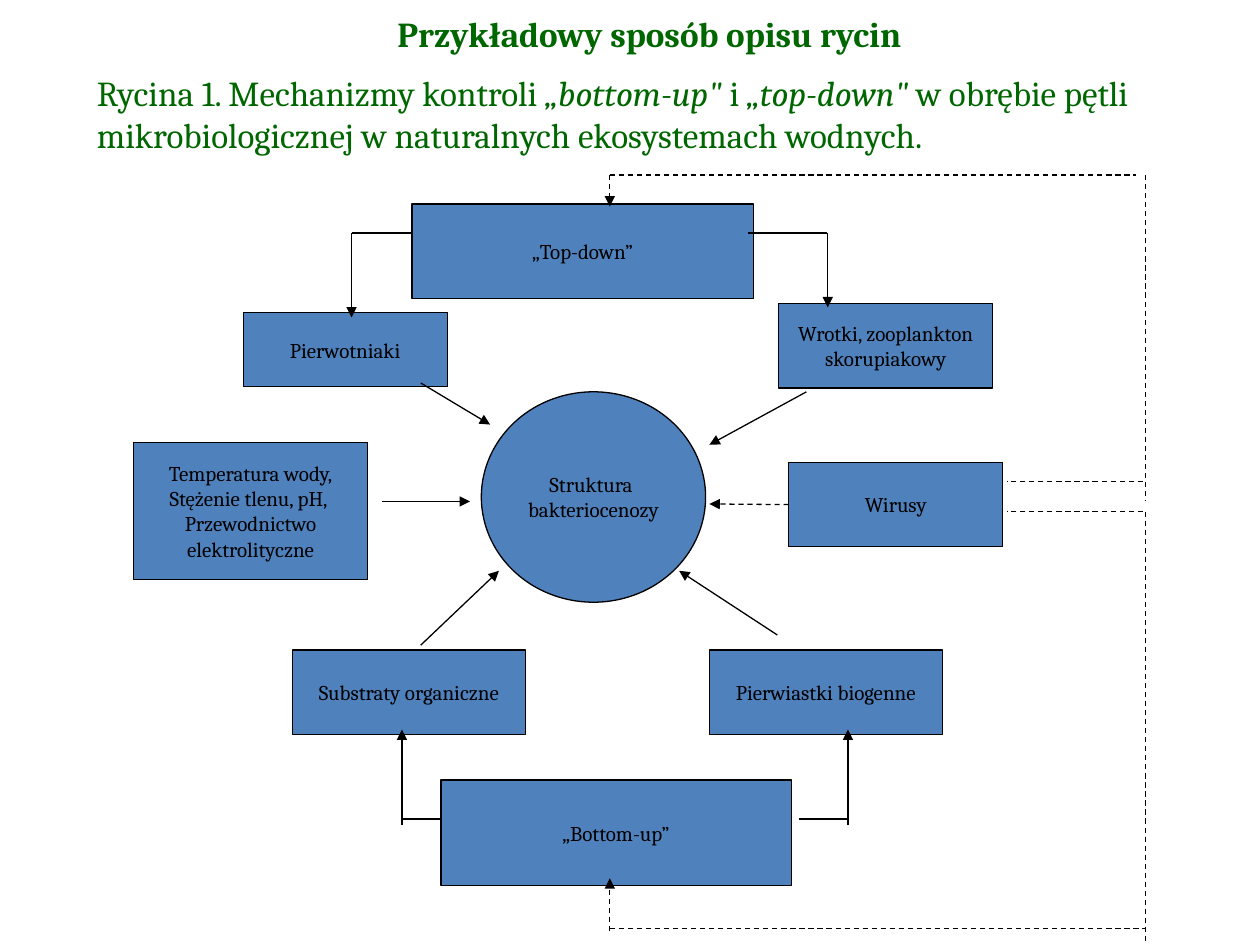
import dataclasses
import typing

import pptx
import pptx.dml.color
import pptx.enum.dml
import pptx.enum.shapes
import pptx.enum.text
import pptx.oxml
import pptx.oxml.ns
import pptx.util

COLUMNS, ROWS = 100, 75
WIDTH, HEIGHT = pptx.util.Inches(10), pptx.util.Inches(7.5)
FONT, GREEN, BLUE, BLACK = "Cambria", "006600", "4F81BD", "000000"
SHAPES = pptx.enum.shapes.MSO_SHAPE
CENTER = pptx.enum.text.PP_ALIGN.CENTER
MIDDLE = pptx.enum.text.MSO_ANCHOR.MIDDLE


@dataclasses.dataclass(frozen=True)
class Node:
    """A labelled shape placed in grid columns and rows."""
    text: str
    left: float
    top: float
    width: float
    height: float
    kind: typing.Any = SHAPES.RECTANGLE


@dataclasses.dataclass(frozen=True)
class Link:
    """A straight line between two grid points."""
    start: tuple[float, float]
    end: tuple[float, float]
    arrow: bool = False
    dashed: bool = False
    source: typing.Optional[str] = None
    side: int = 1


VIRUSES = "Wirusy"
NODES = [
    Node("Struktura \nbakteriocenozy", 38.2, 31.1, 17.8, 16.7, SHAPES.OVAL),
    Node("Pierwotniaki", 19.3, 24.8, 16.2, 5.9),
    Node("Wrotki, zooplankton\nskorupiakowy", 61.8, 24.1, 17, 6.7),
    Node("Temperatura wody,\nStężenie tlenu, pH, \nPrzewodnictwo\nelektrolityczne",
         10.6, 35.1, 18.6, 10.9),
    Node("Substraty organiczne", 23.2, 51.6, 18.5, 6.7),
    Node("Pierwiastki biogenne", 56.3, 51.6, 18.5, 6.7),
    Node(VIRUSES, 62.6, 36.7, 17, 6.7),
    Node("„Bottom-up”", 35, 61.9, 27.8, 8.4),
    Node("„Top-down”", 32.7, 16.2, 27.1, 7.5),
]
LINKS = [
    Link((33.4, 51.2), (39.6, 45.3), arrow=True),
    Link((30.3, 39.8), (37.3, 39.8), arrow=True),
    Link((33.4, 30.4), (38.9, 33.7), arrow=True),
    Link((64, 31.1), (56.3, 35.3), arrow=True),
    Link((61.7, 50.4), (53.9, 45.3), arrow=True),
    Link((31.9, 65.5), (31.9, 57.9), arrow=True),
    Link((67.3, 65.5), (67.3, 57.9), arrow=True),
    Link((31.9, 65), (35, 65)),
    Link((63.4, 65), (67.2, 65)),
    Link((27.9, 18.5), (27.9, 25.2), arrow=True),
    Link((65.7, 18.5), (65.7, 24.4), arrow=True),
    Link((27.9, 18.5), (32.6, 18.5)),
    Link((65.6, 18.5), (59.4, 18.5)),
    Link((62.6, 40), (56.3, 40), arrow=True, dashed=True, source=VIRUSES),
    Link((48.4, 13.9), (48.4, 16.4), arrow=True, dashed=True),
    Link((48.4, 13.9), (90.2, 13.9), dashed=True),
    Link((90.9, 13.9), (90.9, 39.8), dashed=True),
    Link((90.7, 38.2), (79.9, 38.2), dashed=True),
    Link((90.7, 40.6), (79.9, 40.6), dashed=True),
    Link((90.9, 40.6), (90.9, 75), dashed=True),
    Link((48.4, 73.7), (90.9, 73.7), dashed=True),
    Link((48.4, 73.9), (48.4, 69.7), arrow=True, dashed=True),
]
CAPTION = [
    ("Rycina 1. Mechanizmy kontroli", False),
    (" „bottom-up\"", True),
    (" i", False),
    (" „top-down\"", True),
    (" w obrębie pętli mikrobiologicznej w naturalnych ekosystemach wodnych.", False),
]


def across(columns: float) -> int:
    """Turn grid columns into a length."""
    return round(WIDTH * columns / COLUMNS)


def down(rows: float) -> int:
    """Turn grid rows into a length."""
    return round(HEIGHT * rows / ROWS)


def color(value: str) -> pptx.dml.color.RGBColor:
    """Turn a hex string into a colour."""
    return pptx.dml.color.RGBColor.from_string(value)


def style_run(run, size: float, value: str, bold: bool = False, italic: bool = False) -> None:
    """Set the font of a run."""
    run.font.name = FONT
    run.font.size = pptx.util.Pt(size)
    run.font.color.rgb = color(value)
    run.font.bold = bold
    run.font.italic = italic


def draw_node(page, node: Node):
    """Draw a filled shape with its centred label."""
    shape = page.shapes.add_shape(node.kind, across(node.left), down(node.top),
                                  across(node.width), down(node.height))
    shape.shadow.inherit = False
    shape.fill.solid()
    shape.fill.fore_color.rgb = color(BLUE)
    shape.line.color.rgb = color(BLACK)
    shape.line.width = pptx.util.Pt(0.75)
    frame = shape.text_frame
    frame.word_wrap = False
    frame.vertical_anchor = MIDDLE
    frame.text = node.text
    for para in frame.paragraphs:
        para.alignment = CENTER
        for run in para.runs:
            style_run(run, 12, BLACK)
    return shape


def draw_link(page, link: Link, shapes: dict) -> None:
    """Draw a line with an optional dash, arrowhead and joined start."""
    connector = page.shapes.add_connector(
        pptx.enum.shapes.MSO_CONNECTOR.STRAIGHT,
        across(link.start[0]), down(link.start[1]), across(link.end[0]), down(link.end[1]))
    if link.source:
        connector.begin_connect(shapes[link.source], link.side)
    connector.line.color.rgb = color(BLACK)
    connector.line.width = pptx.util.Pt(0.75)
    if link.dashed:
        connector.line.dash_style = pptx.enum.dml.MSO_LINE.DASH
    if link.arrow:
        outline = connector.line._get_or_add_ln()
        outline.append(pptx.oxml.parse_xml(
            f'<a:tailEnd {pptx.oxml.ns.nsdecls("a")} type="triangle"/>'))
    connector._element.spPr.append(pptx.oxml.parse_xml(
        f'<a:effectLst {pptx.oxml.ns.nsdecls("a")}/>'))


def draw_title(page) -> None:
    """Place and format the title placeholder."""
    title = page.shapes.title
    title.left, title.top = across(6.7), down(-0.1)
    title.width, title.height = across(89.7), down(5.5)
    title.text_frame.text = "Przykładowy sposób opisu rycin"
    title.text_frame.vertical_anchor = MIDDLE
    para = title.text_frame.paragraphs[0]
    para.alignment = CENTER
    style_run(para.runs[0], 20, GREEN, bold=True)


def draw_caption(page) -> None:
    """Write the figure caption with its italic terms."""
    box = page.shapes.add_textbox(across(6.7), down(5.2), across(84.3), down(7.7))
    box.text_frame.word_wrap = True
    para = box.text_frame.paragraphs[0]
    for text, italic in CAPTION:
        run = para.add_run()
        run.text = text
        style_run(run, 20, GREEN, italic=italic)


def main() -> None:
    """Build the slide and save it."""
    deck = pptx.Presentation()
    deck.slide_width, deck.slide_height = WIDTH, HEIGHT
    page = deck.slides.add_slide(deck.slide_layouts[5])
    draw_title(page)
    shapes = {node.text: draw_node(page, node) for node in NODES}
    for link in LINKS:
        draw_link(page, link, shapes)
    draw_caption(page)
    deck.save("out.pptx")


if __name__ == "__main__":
    main()
